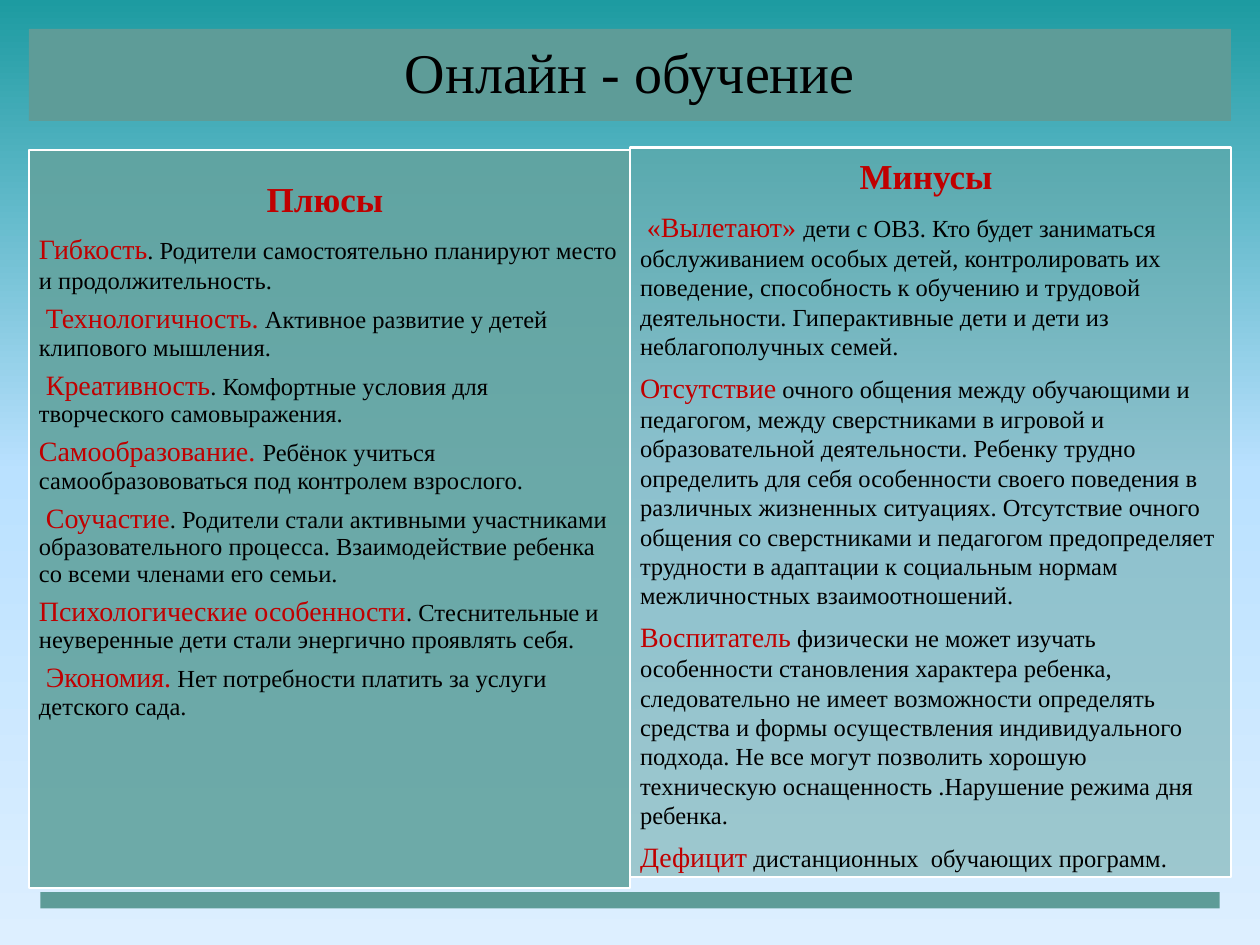
from copy import deepcopy

from lxml import etree
from pptx import Presentation
from pptx import util as u
from pptx.dml.color import RGBColor
from pptx.enum import shapes, text
from pptx.oxml.ns import qn

W, H = 10, 7.5
FONT = "Times New Roman"
COLORS = {
    "sky_top": "1D9BA1", "sky_mid": "BAE1FF", "sky_low": "DDEFFF",
    "bar": "5E9C98", "panel": "62A39F", "edge": "FFFFFF",
    "term": "C00000", "ink": "000000",
}
MARGIN = 0.23
COLUMN = (W - 2 * MARGIN) / 2

PLUSES = [
    ("Гибкость", ". Родители самостоятельно планируют место и продолжительность."),
    (" Технологичность.", " Активное развитие у детей клипового мышления."),
    (" Креативность", ". Комфортные условия для творческого самовыражения."),
    ("Самообразование. ", "Ребёнок учиться самообразововаться под контролем взрослого."),
    (" Соучастие", ". Родители стали активными участниками образовательного процесса. "
                   "Взаимодействие ребенка со всеми членами его семьи."),
    ("Психологические особенности", ". Стеснительные и неуверенные дети стали "
                                    "энергично проявлять себя."),
    (" Экономия.", " Нет потребности платить за услуги детского сада."),
]
MINUSES = [
    (" «Вылетают» ", "дети с ОВЗ. Кто будет заниматься обслуживанием особых детей, "
                     "контролировать их поведение, способность к обучению и трудовой "
                     "деятельности. Гиперактивные дети и дети из неблагополучных семей."),
    ("Отсутствие", " очного общения между обучающими и педагогом, между сверстниками в "
                   "игровой и образовательной деятельности. Ребенку трудно определить для "
                   "себя особенности своего поведения в различных жизненных ситуациях. "
                   "Отсутствие очного общения со сверстниками и педагогом предопределяет "
                   "трудности в адаптации к социальным нормам межличностных "
                   "взаимоотношений."),
    ("Воспитатель", " физически не может изучать особенности становления характера "
                    "ребенка, следовательно не имеет возможности определять средства и "
                    "формы осуществления индивидуального подхода. Не все могут позволить "
                    "хорошую техническую оснащенность .Нарушение режима дня ребенка."),
    ("Дефицит", " дистанционных  обучающих программ."),
]


def rgb(name):
    return RGBColor.from_string(COLORS[name])


def fill_solid(sp, color, alpha=100):
    """Fill with a named colour; alpha is the opacity in percent."""
    sp.fill.solid()
    sp.fill.fore_color.rgb = rgb(color)
    if alpha < 100:
        clr = sp.fill._xPr.find(qn("a:solidFill"))[0]
        etree.SubElement(clr, qn("a:alpha"), val=str(alpha * 1000))


def add_rect(s, box, color, alpha=100):
    sp = s.shapes.add_shape(shapes.MSO_SHAPE.RECTANGLE, *map(u.Inches, box))
    sp.shadow.inherit = False
    fill_solid(sp, color, alpha)
    sp.line.fill.background()
    return sp


def add_run(p, words, size, color, bold=False):
    r = p.add_run()
    r.text = words
    r.font.name = FONT
    r.font.size = u.Pt(size)
    r.font.bold = bold
    r.font.color.rgb = rgb(color)


def set_insets(tf, inset, top=None):
    tf.margin_left = tf.margin_right = tf.margin_bottom = u.Inches(inset)
    tf.margin_top = u.Inches(inset if top is None else top)
    tf.word_wrap = True
    tf.auto_size = text.MSO_AUTO_SIZE.NONE


def paint_background(s):
    fill = s.background.fill
    fill.gradient()
    fill.gradient_angle = 270
    first = fill.gradient_stops[0]._gs
    first.addnext(deepcopy(first))
    names = ("sky_top", "sky_mid", "sky_low")
    for i, (stop, name) in enumerate(zip(fill.gradient_stops, names)):
        stop.color.rgb = rgb(name)
        stop.position = i / 2


def place_title(s, box, words):
    sp = s.shapes.title
    sp.left, sp.top, sp.width, sp.height = map(u.Inches, box)
    fill_solid(sp, "bar")
    tf = sp.text_frame
    set_insets(tf, 0.13)
    tf.vertical_anchor = text.MSO_ANCHOR.MIDDLE
    p = tf.paragraphs[0]
    p.alignment = text.PP_ALIGN.CENTER
    p.line_spacing = 0.9
    add_run(p, words, 32, "ink")


def add_panel(s, box, alpha, heading, items, top_inset, spacing):
    """Outlined column: a heading, then a red term with its explanation per item.

    spacing is the line spacing of the items after the first.
    """
    sp = add_rect(s, box, "panel", alpha)
    sp.line.color.rgb = rgb("edge")
    sp.line.width = u.Pt(1.25)
    tf = sp.text_frame
    set_insets(tf, 0.08, top_inset)
    tf.vertical_anchor = text.MSO_ANCHOR.TOP
    p = tf.paragraphs[0]
    p.alignment = text.PP_ALIGN.CENTER
    p.space_after = u.Pt(7)
    add_run(p, heading, 20, "term", bold=True)
    for i, (term, words) in enumerate(items):
        p = tf.add_paragraph()
        p.alignment = text.PP_ALIGN.LEFT
        p.line_spacing = spacing if i else 1.0
        p.space_after = u.Pt(5.6)
        add_run(p, term, 16, "term")
        add_run(p, words, 14, "ink")


def main():
    prs = Presentation()
    prs.slide_width, prs.slide_height = u.Inches(W), u.Inches(H)
    s = prs.slides.add_slide(prs.slide_layouts[5])
    paint_background(s)
    place_title(s, (MARGIN, MARGIN, 2 * COLUMN, 0.73), "Онлайн - обучение")
    add_panel(s, (MARGIN, 1.19, COLUMN, 5.86), 90, "Плюсы ", PLUSES, 0.22, 0.9)
    add_panel(s, (MARGIN + COLUMN, 1.17, COLUMN, 5.79), 50, "Минусы ", MINUSES, 0.06, 1.0)
    add_rect(s, (0.32, 7.08, W - 2 * 0.32, 0.13), "bar")
    prs.save("out.pptx")


if __name__ == "__main__":
    main()
